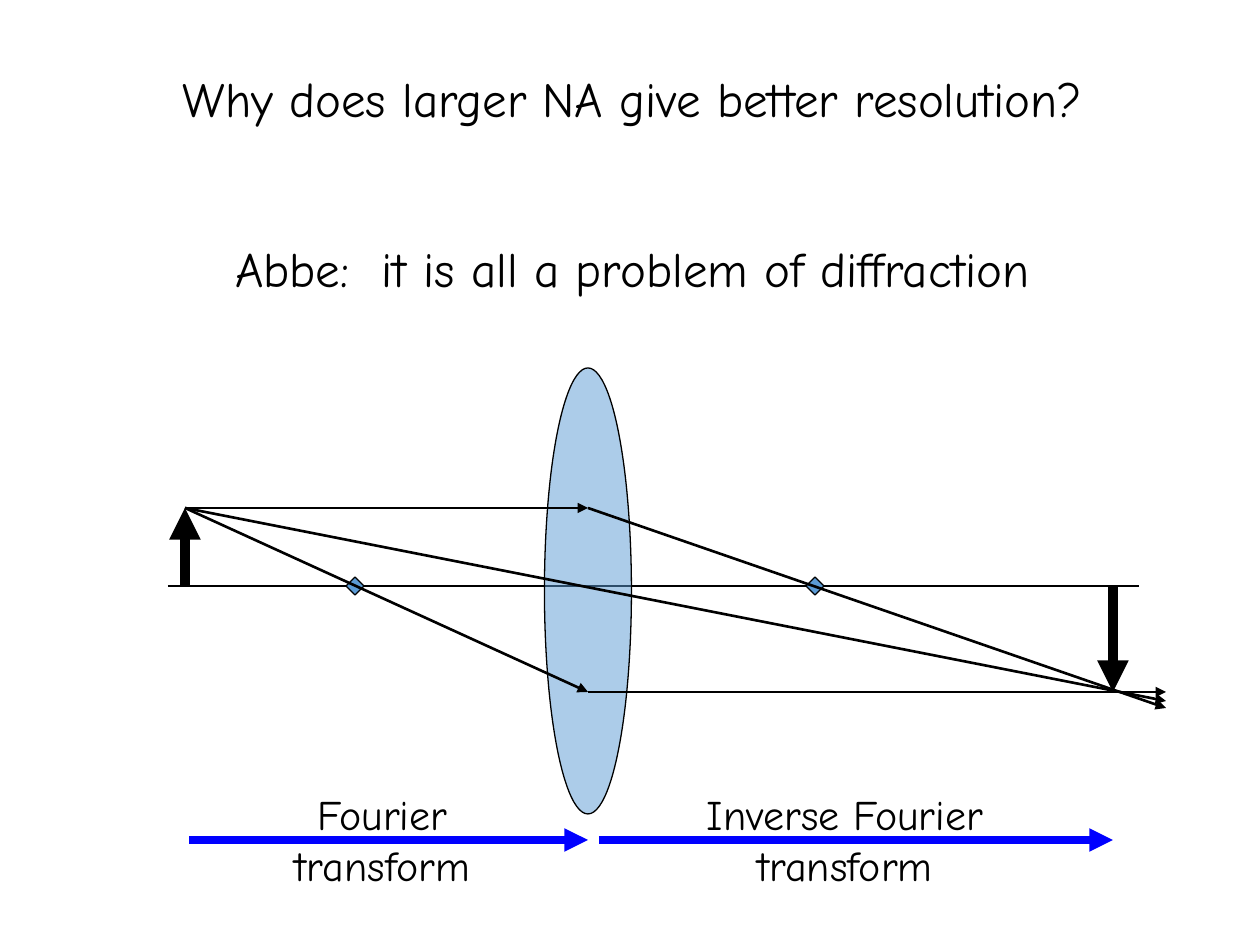
from lxml.etree import SubElement
from pptx import Presentation
from pptx.dml.color import RGBColor
from pptx.enum.shapes import MSO_CONNECTOR, MSO_SHAPE
from pptx.enum.text import MSO_ANCHOR, MSO_AUTO_SIZE, PP_ALIGN
from pptx.oxml.ns import qn
from pptx.util import Emu, Pt

SCALE = 914400 / 126
FONT = "Comic Neue"
BLACK, BLUE, GLASS = "000000", "0000FF", "5B9BD5"

AXIS = 586
TIP, LOW = 508, 692
OBJECT, LENS, IMAGE, EDGE = 185, 588, 1113, 1166
FOCI = 355, 815
BAND = 840


def px(n):
    return Emu(round(n * SCALE))


def paint(color, code):
    color.rgb = RGBColor.from_string(code)


def write(shape, text, size, gap=0):
    """Fill a shape with centred paragraphs, with gap points between them."""
    frame = shape.text_frame
    frame.text = text
    frame.auto_size = MSO_AUTO_SIZE.NONE
    frame.vertical_anchor = MSO_ANCHOR.MIDDLE
    for i, para in enumerate(frame.paragraphs):
        para.alignment = PP_ALIGN.CENTER
        para.space_before = Pt(gap if i else 0)
        for run in para.runs:
            run.font.name = FONT
            run.font.size = Pt(size)
            paint(run.font.color, BLACK)
    return frame


def add_title(slide, text):
    title = slide.shapes.title
    title.left, title.top = px(116), px(40)
    title.width, title.height = px(1033), px(286)
    write(title, text, 28, 64).word_wrap = False


def add_label(slide, left, width, text):
    box = slide.shapes.add_textbox(px(left), px(774), px(width), px(130))
    write(box, text, 24).word_wrap = True


def add_line(slide, start, end, weight=1.5, code=BLACK, arrow=True):
    line = slide.shapes.add_connector(
        MSO_CONNECTOR.STRAIGHT, *map(px, start), *map(px, end))
    line.line.width = Pt(weight)
    paint(line.line.color, code)
    if arrow:
        SubElement(line.line._get_or_add_ln(), qn("a:tailEnd"), type="triangle")
    SubElement(line._element.spPr, qn("a:effectLst"))


def add_glass(slide, kind, mid, width, height, alpha=100):
    """Add a blue shape centred on the point mid; alpha is in percent."""
    x, y = mid
    shape = slide.shapes.add_shape(
        kind, px(x - width / 2), px(y - height / 2), px(width), px(height))
    shape.shadow.inherit = False
    shape.fill.solid()
    paint(shape.fill.fore_color, GLASS)
    paint(shape.line.color, BLACK)
    shape.line.width = Pt(0.75)
    if alpha < 100:
        color = shape._element.spPr.find(".//" + qn("a:srgbClr"))
        SubElement(color, qn("a:alpha"), val=str(alpha * 1000))


def main():
    deck = Presentation()
    deck.slide_width, deck.slide_height = px(1260), px(945)
    slide = deck.slides.add_slide(deck.slide_layouts[5])
    add_title(slide, "Why does larger NA give better resolution?\n"
                     "Abbe:  it is all a problem of diffraction")

    add_line(slide, (168, AXIS), (1139, AXIS), 0.75, arrow=False)
    add_glass(slide, MSO_SHAPE.OVAL, (LENS, 591), 87, 446, 50)
    for x in FOCI:
        add_glass(slide, MSO_SHAPE.DIAMOND, (x, AXIS), 18, 18)

    tip, high, low = (OBJECT, TIP), (LENS, TIP), (LENS, LOW)
    rays = [(tip, (EDGE, 701)), (tip, high), (high, (EDGE, 708)),
            (tip, low), (low, (EDGE, LOW))]
    for start, end in rays:
        add_line(slide, start, end)
    add_line(slide, (OBJECT, AXIS), tip, 6)
    add_line(slide, (IMAGE, AXIS), (IMAGE, LOW), 6)

    for start, end in [(189, LENS), (599, IMAGE)]:
        add_line(slide, (start, BAND), (end, BAND), 4.5, BLUE)
    add_label(slide, 251, 263, "Fourier transform")
    add_label(slide, 661, 368, "Inverse Fourier transform")
    deck.save("out.pptx")


if __name__ == "__main__":
    main()
